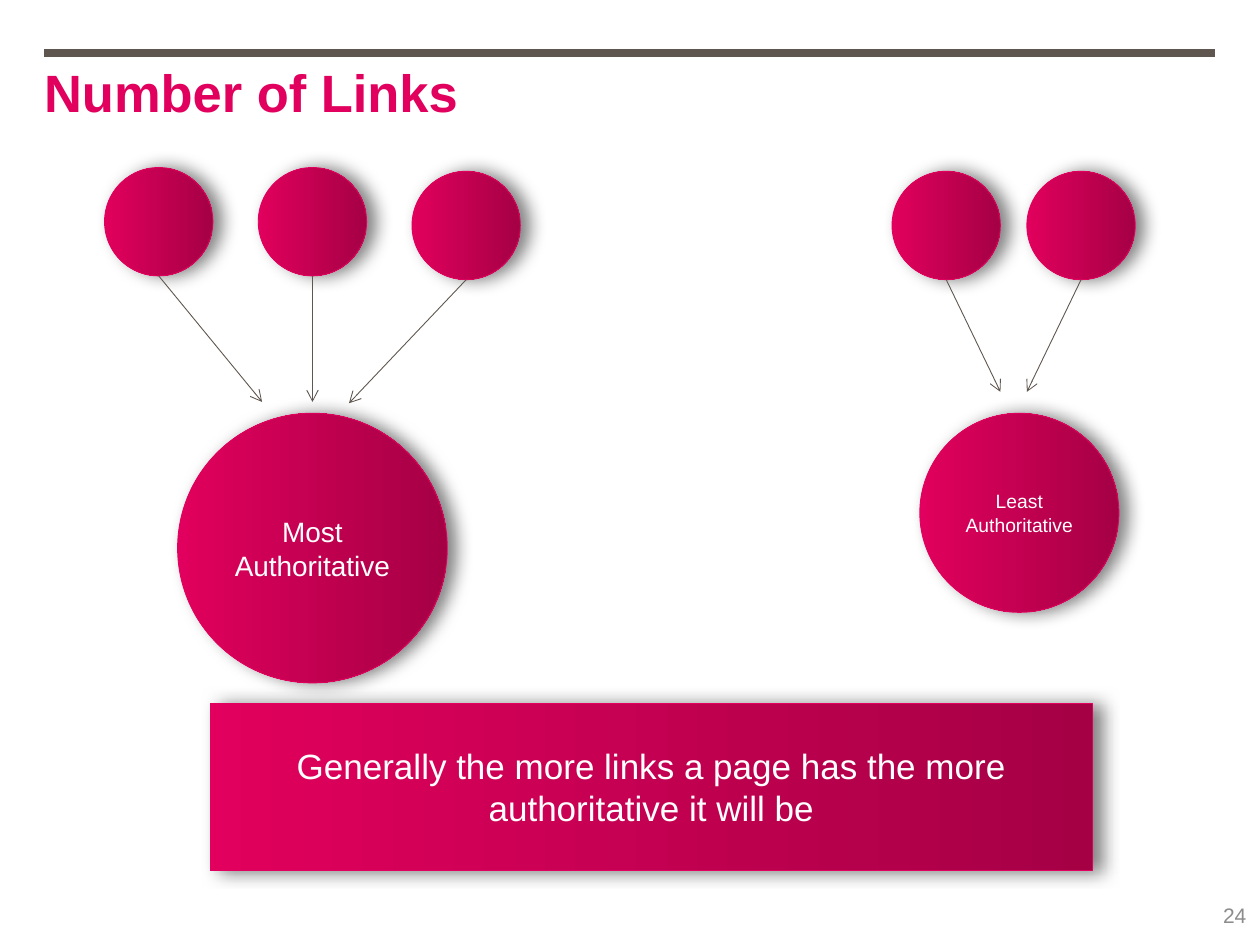
from pptx import Presentation
from pptx.dml.color import RGBColor
from pptx.enum.shapes import MSO_CONNECTOR as Connector, MSO_SHAPE as Shape
from pptx.enum.text import MSO_ANCHOR as Anchor, MSO_AUTO_SIZE as AutoSize, PP_ALIGN as Align
from pptx.oxml import parse_xml
from pptx.oxml.ns import nsdecls, qn
from pptx.util import Inches, Pt

COLORS = {"pink": "E1005D", "wine": "A60045", "brown": "5F574F",
          "gray": "8C8C8C", "white": "FFFFFF", "black": "000000"}
FONT = "Arial"
SMALL = 0.86  # diameter of a linking page


def rgb(name):
    return RGBColor.from_string(COLORS[name])


def box(*lengths):
    return [Inches(length) for length in lengths]


def write(shape, text, size, color, align=Align.CENTER, anchor=Anchor.MIDDLE,
          bold=False, margin=None):
    """Put one formatted paragraph in a shape and return the paragraph."""
    frame = shape.text_frame
    frame.text = text
    frame.word_wrap = True
    frame.auto_size = AutoSize.NONE
    frame.vertical_anchor = anchor
    if margin is not None:
        frame.margin_left = frame.margin_right = margin
        frame.margin_top = frame.margin_bottom = margin
    paragraph = frame.paragraphs[0]
    paragraph.alignment = align
    font = paragraph.runs[0].font
    font.name, font.size, font.bold = FONT, Pt(size), bold
    font.color.rgb = rgb(color)
    return paragraph


def add_shadow(shape):
    shape.shadow.inherit = False
    effects = shape._element.spPr.find(qn("a:effectLst"))
    effects.append(parse_xml(
        f'<a:outerShdw {nsdecls("a")} blurRad="{Pt(10)}" dist="{Pt(5)}" dir="0" '
        f'algn="ctr" rotWithShape="0"><a:srgbClr val="{COLORS["black"]}">'
        '<a:alpha val="50000"/></a:srgbClr></a:outerShdw>'))


def add_glossy(slide, preset, left, top, width, height, text=None, size=None):
    """Add a shape with the pink gradient and a soft shadow."""
    shape = slide.shapes.add_shape(preset, *box(left, top, width, height))
    shape.fill.gradient()
    shape.fill.gradient_angle = 0
    for stop, color in zip(shape.fill.gradient_stops, ("pink", "wine")):
        stop.color.rgb = rgb(color)
    shape.line.color.rgb = rgb("pink")
    shape.line.width = Pt(0.5)
    add_shadow(shape)
    if text:
        write(shape, text, size, "white")


def add_line(slide, start, end, width, arrow=False):
    line = slide.shapes.add_connector(Connector.STRAIGHT, *box(*start, *end))
    line.line.color.rgb = rgb("brown")
    line.line.width = Pt(width)
    if arrow:
        line.line._get_or_add_ln().append(
            parse_xml(f'<a:tailEnd {nsdecls("a")} type="arrow"/>'))
    line._element.spPr.append(parse_xml(f'<a:effectLst {nsdecls("a")}/>'))


def add_link_group(slide, target, links):
    """Add a target page and the pages linking to it: (left, top, arrow end)."""
    left, top, diameter, text, size = target
    add_glossy(slide, Shape.OVAL, left, top, diameter, diameter, text, size)
    for left, top, end in links:
        add_glossy(slide, Shape.OVAL, left, top, SMALL, SMALL)
        add_line(slide, (left + SMALL / 2, top + SMALL), end, 0.5, arrow=True)


def main():
    presentation = Presentation()
    presentation.slide_width, presentation.slide_height = box(10, 7.5)
    slide = presentation.slides.add_slide(presentation.slide_layouts[5])

    # Header rule and title
    add_line(slide, (0.35, 0.42), (9.64, 0.42), 4.5)
    title = slide.shapes.title
    title.left, title.top, title.width, title.height = box(0.35, 0.43, 5.91, 1.11)
    write(title, "Number of Links", 30, "pink", Align.LEFT, Anchor.TOP,
          bold=True, margin=0).line_spacing = 1.1

    # Pages with many and with few links
    add_link_group(slide, (1.41, 3.28, 2.14, "Most Authoritative", 16),
                   [(0.83, 1.33, (2.08, 3.19)),
                    (2.05, 1.33, (2.48, 3.19)),
                    (3.27, 1.36, (2.77, 3.2))])
    add_link_group(slide, (7.3, 3.28, 1.58, "Least Authoritative", 11),
                   [(7.08, 1.36, (7.94, 3.11)),
                    (8.15, 1.36, (8.15, 3.11))])

    # Conclusion
    add_glossy(slide, Shape.RECTANGLE, 1.67, 5.58, 7, 1.33,
               "Generally the more links a page has the more authoritative it will be", 20)

    # Page number
    number = slide.shapes.add_textbox(*box(9.66, 7.11, 0.28, 0.3))
    write(number, "24", 12, "gray", margin=0)

    presentation.save("out.pptx")


if __name__ == "__main__":
    main()
